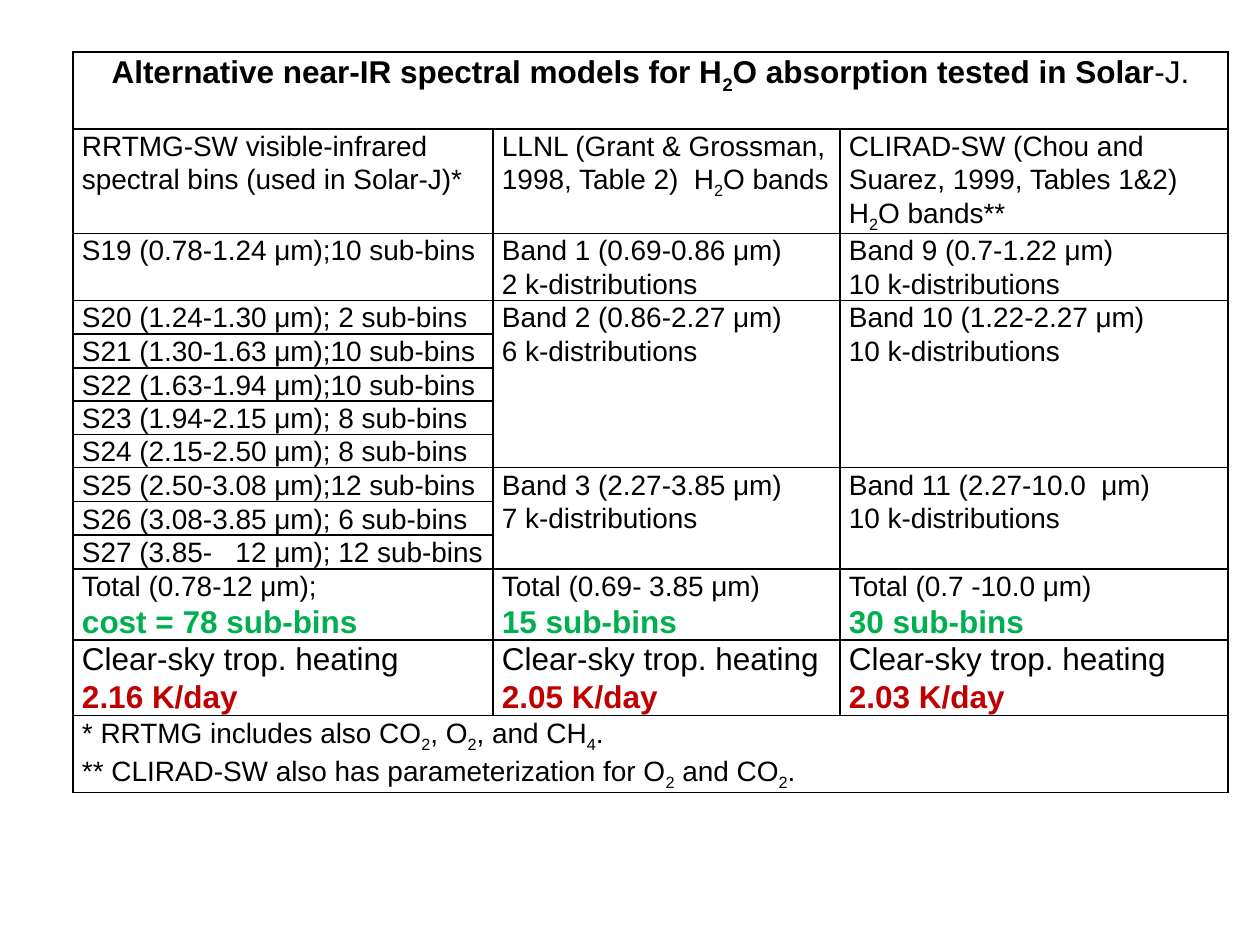
import pptx
import pptx.dml.color
import pptx.enum.text
import pptx.oxml
import pptx.oxml.ns
import pptx.util

EMU_PER_PX = 914400 / 126
THEME = {
    "font": "Arial",
    "border": "000000",
    "border_width": 12700,
    "line_spacing": 1.07,
    "title": {"size": 18, "bold": True, "color": "000000"},
    "body": {"size": 16, "bold": False, "color": "000000"},
    "heating": {"size": 18, "bold": False, "color": "000000"},
    "cost": {"size": 18, "bold": True, "color": "00B050"},
    "result": {"size": 18, "bold": True, "color": "C00000"},
}
COLUMN_WIDTHS = [420, 347, 388]
ROW_HEIGHTS = [77, 104, 67, 33, 34, 33, 33, 33, 34, 33, 34, 70, 75, 77]

# Each line of a cell is a list of (text, style) pieces; "_" lowers the next character.
TITLE = [[("Alternative near-IR spectral models for H_2O absorption tested in Solar", "title"),
          ("-J.", "heating")]]
HEADERS = [
    "RRTMG-SW visible-infrared spectral bins (used in Solar-J)*",
    "LLNL (Grant & Grossman, 1998, Table 2)  H_2O bands",
    "CLIRAD-SW (Chou and Suarez, 1999, Tables 1&2)  H_2O bands**",
]
SPECTRAL_BINS = [
    "S19 (0.78-1.24 μm);10 sub-bins",
    "S20 (1.24-1.30 μm); 2 sub-bins",
    "S21 (1.30-1.63 μm);10 sub-bins",
    "S22 (1.63-1.94 μm);10 sub-bins",
    "S23 (1.94-2.15 μm); 8 sub-bins",
    "S24 (2.15-2.50 μm); 8 sub-bins",
    "S25 (2.50-3.08 μm);12 sub-bins",
    "S26 (3.08-3.85 μm); 6 sub-bins",
    "S27 (3.85-   12 μm); 12 sub-bins",
]
# First row, last row, then band and number of distributions for the second and third columns
BANDS = [
    (2, 2, ("Band 1 (0.69-0.86 μm)", 2), ("Band 9 (0.7-1.22 μm)", 10)),
    (3, 7, ("Band 2 (0.86-2.27 μm)", 6), ("Band 10 (1.22-2.27 μm)", 10)),
    (8, 10, ("Band 3 (2.27-3.85 μm)", 7), ("Band 11 (2.27-10.0  μm)", 10)),
]
# Total range, cost and heating of each model
TOTALS = [
    ("Total (0.78-12 μm);", "cost = 78 sub-bins", "2.16 K/day"),
    ("Total (0.69- 3.85 μm)", "15 sub-bins", "2.05 K/day"),
    ("Total (0.7 -10.0 μm)", "30 sub-bins", "2.03 K/day"),
]
FOOTNOTES = [
    "* RRTMG includes also CO_2, O_2, and CH_4.",
    "** CLIRAD-SW also has parameterization for O_2 and CO_2.",
]


def px(length):
    return pptx.util.Emu(round(length * EMU_PER_PX))


def add_text(paragraph, text, style):
    """Add text as runs, lowering each character that follows an underscore."""
    first, *lowered = text.split("_")
    pieces = [(first, False)]
    for part in lowered:
        pieces += [(part[0], True), (part[1:], False)]
    for piece, is_subscript in pieces:
        run = paragraph.add_run()
        run.text = piece
        values = {"name": THEME["font"], "size": pptx.util.Pt(style["size"]), "bold": style["bold"]}
        for name, value in values.items():
            setattr(run.font, name, value)
        run.font.color.rgb = pptx.dml.color.RGBColor.from_string(style["color"])
        if is_subscript:
            run.font._element.set("baseline", "-25000")


# Contents by (row, column)
contents = {(0, 0): TITLE}
for column, header in enumerate(HEADERS):
    contents[1, column] = [[(header, "body")]]
for row, spectral_bin in enumerate(SPECTRAL_BINS, start=2):
    contents[row, 0] = [[(spectral_bin, "body")]]
merges = [(0, 0, 0, 2), (13, 0, 13, 2)]
for first_row, last_row, *models in BANDS:
    for column, (band, count) in enumerate(models, start=1):
        contents[first_row, column] = [[(band, "body")], [(f"{count} k-distributions", "body")]]
        if last_row > first_row:
            merges.append((first_row, column, last_row, column))
for column, (total, cost, heating) in enumerate(TOTALS):
    contents[11, column] = [[(total, "body")], [(cost, "cost")]]
    contents[12, column] = [[("Clear-sky trop. heating", "heating")], [(heating, "result")]]
contents[13, 0] = [[(footnote, "body")] for footnote in FOOTNOTES]

presentation = pptx.Presentation()
presentation.slide_width = px(1260)
presentation.slide_height = px(945)
slide = presentation.slides.add_slide(presentation.slide_layouts[6])

table = slide.shapes.add_table(
    len(ROW_HEIGHTS), len(COLUMN_WIDTHS),
    px(73), px(52), px(sum(COLUMN_WIDTHS)), px(sum(ROW_HEIGHTS)),
).table
table.first_row = False
table.horz_banding = False
for column, width in zip(table.columns, COLUMN_WIDTHS):
    column.width = px(width)
for row, height in zip(table.rows, ROW_HEIGHTS):
    row.height = px(height)
for top, left, bottom, right in merges:
    table.cell(top, left).merge(table.cell(bottom, right))

cell_format = {"margin_left": px(9), "margin_right": px(9), "margin_top": 0, "margin_bottom": 0}
for cell in table.iter_cells():
    for name, value in cell_format.items():
        setattr(cell, name, value)
    for side in ("lnL", "lnR", "lnT", "lnB"):
        cell._tc.get_or_add_tcPr().append(pptx.oxml.parse_xml(
            f'<a:{side} {pptx.oxml.ns.nsdecls("a")} w="{THEME["border_width"]}"><a:solidFill>'
            f'<a:srgbClr val="{THEME["border"]}"/></a:solidFill></a:{side}>'))
    cell.fill.background()
    # Keeps covered and empty cells from stretching their rows
    cell.text_frame.paragraphs[0].font.size = pptx.util.Pt(THEME["body"]["size"])

for (row, column), lines in contents.items():
    text_frame = table.cell(row, column).text_frame
    for index, line in enumerate(lines):
        paragraph = text_frame.add_paragraph() if index else text_frame.paragraphs[0]
        paragraph.line_spacing = THEME["line_spacing"]
        if row == 0:
            paragraph.alignment = pptx.enum.text.PP_ALIGN.CENTER
        for text, style_name in line:
            add_text(paragraph, text, THEME[style_name])

presentation.save("out.pptx")
